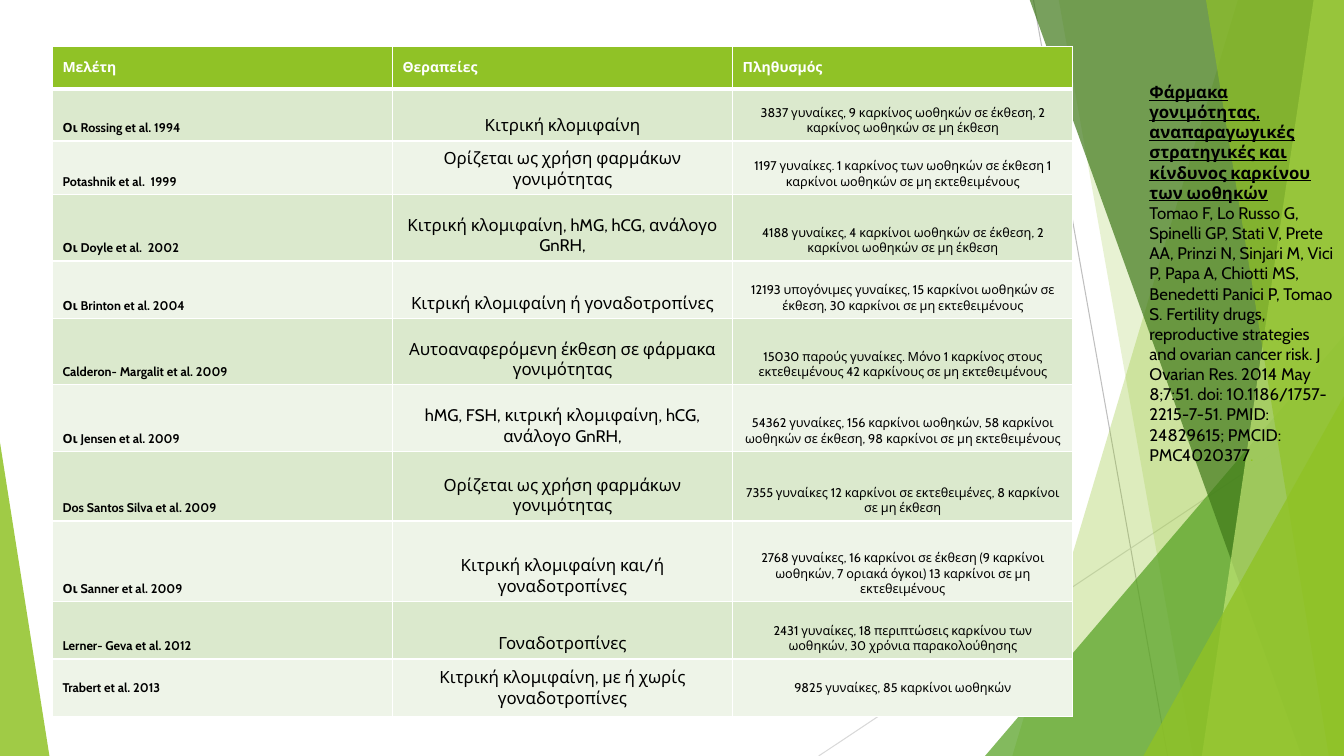
from dataclasses import dataclass

from lxml.etree import SubElement
from pptx import Presentation
from pptx.dml.color import RGBColor
from pptx.enum.shapes import MSO_CONNECTOR as Connector, MSO_SHAPE as Preset
from pptx.enum.text import MSO_ANCHOR as Anchor, MSO_AUTO_SIZE as AutoSize, PP_ALIGN as Align
from pptx.oxml.ns import qn
from pptx.oxml.xmlchemy import OxmlElement
from pptx.util import Emu, Pt

PX = 9144  # 100 px to the inch
WIDTH, HEIGHT = 1333, 750
FONT = "Cabin"
GREEN, WHITE, BLACK = "90C226", "FFFFFF", "000000"
BANDS = ("DBE9CD", "EEF4E8")


@dataclass
class Ray:
    start: tuple[int, int]
    end: tuple[int, int]
    color: str


@dataclass
class Facet:
    """A translucent polygon of the backdrop."""
    points: list[tuple[int, int]]
    color: str
    opacity: int


@dataclass
class Wedge:
    """A translucent triangle; apex is 0 for left and 1 for right."""
    box: tuple[int, int, int, int]
    apex: int
    color: str
    opacity: int


@dataclass
class Study:
    name: str
    therapy: str
    population: str
    height: int
    anchor: Anchor = Anchor.BOTTOM


def right_facet(top: int, bottom: int, color: str, opacity: int) -> Facet:
    return Facet([(top, -1), (WIDTH, -1), (WIDTH, HEIGHT), (bottom, HEIGHT)], color, opacity)


RAYS = [
    Ray((1025, 0), (1158, HEIGHT), "BFBFBF"),
    Ray((WIDTH, 403), (812, HEIGHT), "D9D9D9"),
]
BACKDROP = [
    right_facet(1228, 1004, GREEN, 30),
    right_facet(1050, 1183, GREEN, 20),
    Wedge((977, 333, 356, 417), 1, "54A021", 72),
    right_facet(1021, 1291, "3F7819", 70),
    right_facet(1303, 1192, "C0E474", 70),
    right_facet(1196, 1318, GREEN, 65),
    Wedge((1134, 393, 199, 357), 1, GREEN, 80),
    Wedge((0, 439, 49, 311), 0, GREEN, 85),
]

HEADING = "Φάρμακα γονιμότητας, αναπαραγωγικές στρατηγικές και κίνδυνος καρκίνου των ωοθηκών"
CITATION = (
    "Tomao F, Lo Russo G, Spinelli GP, Stati V, Prete AA, Prinzi N, Sinjari M, Vici P, Papa A, "
    "Chiotti MS, Benedetti Panici P, Tomao S. Fertility drugs, reproductive strategies and ovarian "
    "cancer risk. J Ovarian Res. 2014 May 8;7:51. doi: 10.1186/1757-2215-7-51. PMID: 24829615; "
    "PMCID: PMC4020377"
)
HEADERS = ("Μελέτη", "Θεραπείες", "Πληθυσμός")
HEADER_HEIGHT = 42
STUDIES = [
    Study("Οι Rossing et al. 1994", "Κιτρική κλομιφαίνη",
          "3837 γυναίκες, 9 καρκίνος ωοθηκών σε έκθεση, 2 καρκίνος ωοθηκών σε μη έκθεση", 52),
    Study("Potashnik et al.  1999", "Ορίζεται ως χρήση φαρμάκων γονιμότητας",
          "1197 γυναίκες. 1 καρκίνος των ωοθηκών σε έκθεση 1 καρκίνοι ωοθηκών σε μη εκτεθειμένους", 53),
    Study("Οι Doyle et al.  2002", "Κιτρική κλομιφαίνη, hMG, hCG, ανάλογο GnRH,",
          "4188 γυναίκες, 4 καρκίνοι ωοθηκών σε έκθεση, 2 καρκίνοι ωοθηκών σε μη έκθεση", 66),
    Study("Οι Brinton et al. 2004", "Κιτρική κλομιφαίνη ή γοναδοτροπίνες",
          "12193 υπογόνιμες γυναίκες, 15 καρκίνοι ωοθηκών σε έκθεση, 30 καρκίνοι σε μη εκτεθειμένους", 57),
    Study("Calderon- Margalit et al. 2009", "Αυτοαναφερόμενη έκθεση σε φάρμακα γονιμότητας",
          "15030 παρούς γυναίκες. Μόνο 1 καρκίνος στους εκτεθειμένους 42 καρκίνους σε μη εκτεθειμένους", 66),
    Study("Οι Jensen et al. 2009", "hMG, FSH, κιτρική κλομιφαίνη, hCG, ανάλογο GnRH,",
          "54362 γυναίκες, 156 καρκίνοι ωοθηκών, 58 καρκίνοι ωοθηκών σε έκθεση, "
          "98 καρκίνοι σε μη εκτεθειμένους", 66),
    Study("Dos Santos Silva et al. 2009", "Ορίζεται ως χρήση φαρμάκων γονιμότητας",
          "7355 γυναίκες 12 καρκίνοι σε εκτεθειμένες, 8 καρκίνοι σε μη έκθεση", 69),
    Study("Οι Sanner et al. 2009", "Κιτρική κλομιφαίνη και/ή γοναδοτροπίνες",
          "2768 γυναίκες, 16 καρκίνοι σε έκθεση (9 καρκίνοι ωοθηκών, 7 οριακά όγκοι) "
          "13 καρκίνοι σε μη εκτεθειμένους", 80),
    Study("Lerner- Geva et al. 2012", "Γοναδοτροπίνες",
          "2431 γυναίκες, 18 περιπτώσεις καρκίνου των ωοθηκών, 30 χρόνια παρακολούθησης", 57),
    Study("Trabert et al. 2013", "Κιτρική κλομιφαίνη, με ή χωρίς γοναδοτροπίνες",
          "9825 γυναίκες, 85 καρκίνοι ωοθηκών", 57, Anchor.MIDDLE),
]


def px(*lengths: int) -> list[Emu]:
    return [Emu(length * PX) for length in lengths]


def rgb(color: str) -> RGBColor:
    return RGBColor.from_string(color)


def style_run(run, size: int, color: str, bold: bool = False, underline: bool = False) -> None:
    font = run.font
    font.name, font.size, font.bold, font.underline = FONT, Pt(size), bold, underline
    font.color.rgb = rgb(color)


def draw_ray(slide, ray: Ray) -> None:
    line = slide.shapes.add_connector(Connector.STRAIGHT, *px(*ray.start, *ray.end))
    line.line.color.rgb = rgb(ray.color)
    line.line.width = Pt(0.75)
    SubElement(line.element.spPr, qn("a:effectLst"))


def draw_backdrop_part(slide, part: Facet | Wedge) -> None:
    if isinstance(part, Wedge):
        shape = slide.shapes.add_shape(Preset.ISOSCELES_TRIANGLE, *px(*part.box))
        shape.adjustments[0] = part.apex
    else:
        builder = slide.shapes.build_freeform(*part.points[0], scale=PX)
        builder.add_line_segments(part.points[1:], close=True)
        shape = builder.convert_to_shape()
    shape.shadow.inherit = False
    shape.line.fill.background()
    shape.fill.solid()
    shape.fill.fore_color.rgb = rgb(part.color)
    color = shape.element.spPr.find(f"{qn('a:solidFill')}/{qn('a:srgbClr')}")
    SubElement(color, qn("a:alpha"), val=str(part.opacity * 1000))


def place_title(title) -> None:
    title.left, title.top, title.width, title.height = px(1130, 76, 203, 449)
    frame = title.text_frame
    frame.text = f"{HEADING}\v{CITATION}"
    frame.word_wrap, frame.auto_size, frame.vertical_anchor = True, AutoSize.NONE, Anchor.TOP
    paragraph = frame.paragraphs[0]
    paragraph.alignment = Align.LEFT
    heading, citation = paragraph.runs
    style_run(heading, 12, BLACK, bold=True, underline=True)
    style_run(citation, 12, BLACK)
    full_stop = paragraph.add_run()
    full_stop.text = "."
    style_run(full_stop, 12, GREEN)
    # The line break keeps the size of the text around it
    SubElement(frame.paragraphs[0]._p.find(qn("a:br")), qn("a:rPr"), sz="1200")
    # Bring the title in front of the backdrop
    title.element.getparent().append(title.element)


def set_borders(cell, bottom: int) -> None:
    properties = cell._tc.get_or_add_tcPr()
    for index, (side, points) in enumerate({"L": 1, "R": 1, "T": 1, "B": bottom}.items()):
        line = OxmlElement(f"a:ln{side}")
        line.set("w", str(Pt(points)))
        SubElement(SubElement(line, qn("a:solidFill")), qn("a:srgbClr"), val=WHITE)
        properties.insert(index, line)


def fill_cell(cell, text: str, fill: str, anchor: Anchor, align: Align, size: int,
              color: str, bold: bool, bottom: int = 1) -> None:
    cell.text_frame.text = text
    cell.vertical_anchor = anchor
    cell.fill.solid()
    cell.fill.fore_color.rgb = rgb(fill)
    paragraph = cell.text_frame.paragraphs[0]
    paragraph.alignment = align
    style_run(paragraph.runs[0], size, color, bold)
    set_borders(cell, bottom)


def draw_studies(slide) -> None:
    heights = [HEADER_HEIGHT] + [study.height for study in STUDIES]
    frame = slide.shapes.add_table(len(heights), len(HEADERS), *px(52, 46, 1012, sum(heights)))
    table = frame.table
    table.horz_banding = False
    for row, height in zip(table.rows, heights):
        row.height = Emu(height * PX)
    for column, header in enumerate(HEADERS):
        fill_cell(table.cell(0, column), header, GREEN, Anchor.MIDDLE, Align.LEFT, 10, WHITE, True, bottom=3)
    for index, study in enumerate(STUDIES):
        columns = [(study.name, Align.LEFT, 9, True), (study.therapy, Align.CENTER, 12, False),
                   (study.population, Align.CENTER, 9, False)]
        for column, (text, align, size, bold) in enumerate(columns):
            fill_cell(table.cell(index + 1, column), text, BANDS[index % 2], study.anchor,
                      align, size, BLACK, bold)


def main() -> None:
    presentation = Presentation()
    presentation.slide_width, presentation.slide_height = px(WIDTH, HEIGHT)
    slide = presentation.slides.add_slide(presentation.slide_layouts[5])
    for ray in RAYS:
        draw_ray(slide, ray)
    for part in BACKDROP:
        draw_backdrop_part(slide, part)
    place_title(slide.shapes.title)
    draw_studies(slide)
    presentation.save("out.pptx")


if __name__ == "__main__":
    main()
